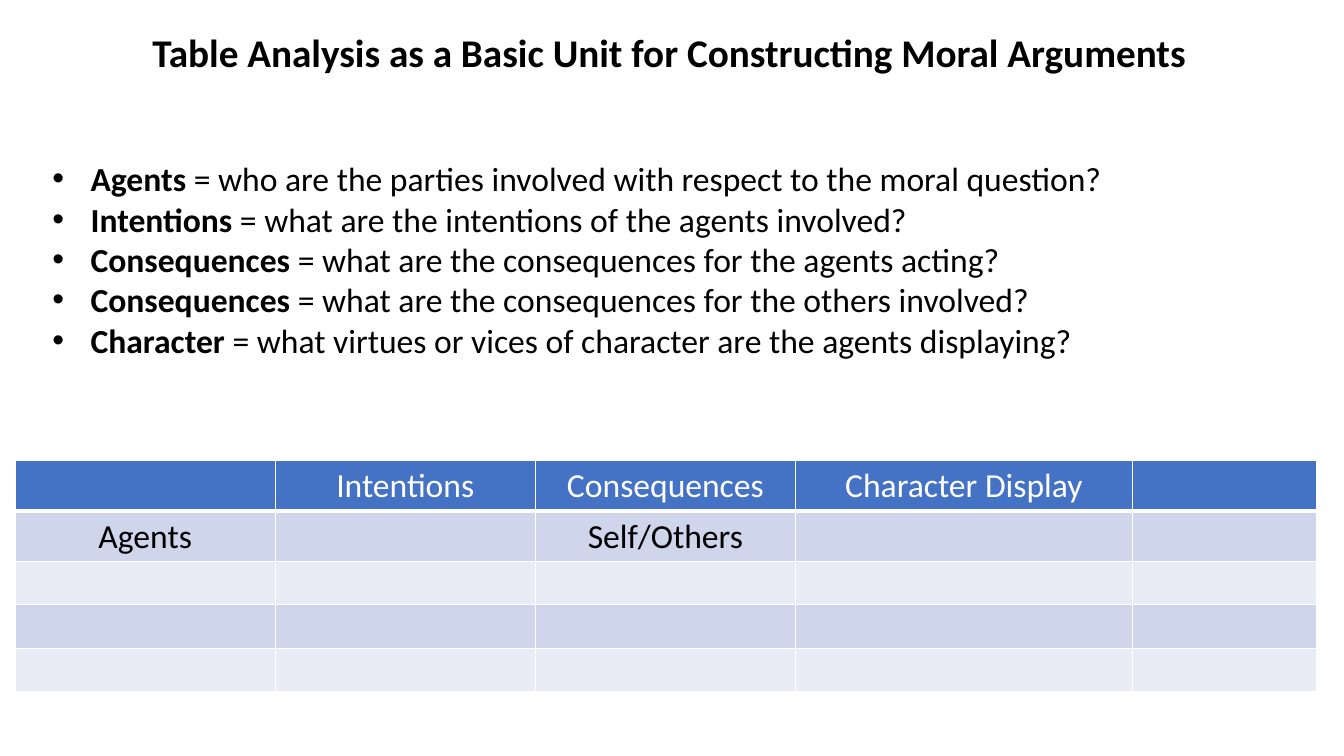
from dataclasses import dataclass

from lxml import etree
from pptx import Presentation
from pptx.dml.color import RGBColor
from pptx.enum.text import MSO_ANCHOR, PP_ALIGN
from pptx.oxml.ns import qn
from pptx.util import Inches, Pt

CENTER = PP_ALIGN.CENTER
LEFT = PP_ALIGN.LEFT
MIDDLE = MSO_ANCHOR.MIDDLE
TOP = MSO_ANCHOR.TOP


@dataclass(frozen=True)
class Theme:
    font: str = "Calibri"
    title_size: int = 28
    body_size: int = 24
    text: str = "000000"
    header_text: str = "FFFFFF"
    header_fill: str = "4472C4"
    bands: tuple = ("CFD5EA", "E9EBF5")
    border: str = "FFFFFF"
    border_width: int = 1
    header_rule_width: int = 3
    bullet_indent: float = 0.38


TITLE = "Table Analysis as a Basic Unit for Constructing Moral Arguments"

DEFINITIONS = [
    ("Agents", "who are the parties involved with respect to the moral question?"),
    ("Intentions", "what are the intentions of the agents involved?"),
    ("Consequences", "what are the consequences for the agents acting?"),
    ("Consequences", "what are the consequences for the others involved?"),
    ("Character", "what virtues or vices of character are the agents displaying?"),
]

COLUMN_WIDTHS = [2.58, 2.58, 2.58, 3.34, 1.83]
ROW_HEIGHTS = [0.5, 0.5, 0.43, 0.43, 0.43]
ANALYSIS_CELLS = {
    (0, 1): "Intentions",
    (0, 2): "Consequences",
    (0, 3): "Character Display",
    (1, 0): "Agents",
    (1, 2): "Self/Others",
}


def add_text(paragraph, text, *, font, size, color, bold=False):
    run = paragraph.add_run()
    run.text = text
    run.font.name = font
    run.font.size = Pt(size)
    run.font.bold = bold
    run.font.color.rgb = RGBColor.from_string(color)


def set_bullet(paragraph, indent):
    """Give the paragraph a round bullet with a hanging indent in inches."""
    properties = paragraph._p.get_or_add_pPr()
    properties.set("marL", str(Inches(indent)))
    properties.set("indent", str(-Inches(indent)))
    etree.SubElement(properties, qn("a:buFont")).set("typeface", "Arial")
    etree.SubElement(properties, qn("a:buChar")).set("char", "•")


def set_borders(cell, color, width, bottom_width):
    """Draw all four cell borders; call before the fill, which must follow them."""
    properties = cell._tc.get_or_add_tcPr()
    widths = {"lnL": width, "lnR": width, "lnT": width, "lnB": bottom_width}
    for side, points in widths.items():
        line = etree.SubElement(properties, qn(f"a:{side}"), w=str(Pt(points)))
        fill = etree.SubElement(line, qn("a:solidFill"))
        etree.SubElement(fill, qn("a:srgbClr")).set("val", color)


class SlideBuilder:
    def __init__(self, slide, theme):
        self.slide = slide
        self.theme = theme

    def text_frame(self, left, top, width, height, anchor=TOP):
        shape = self.slide.shapes.add_textbox(
            Inches(left), Inches(top), Inches(width), Inches(height))
        shape.text_frame.word_wrap = True
        shape.text_frame.vertical_anchor = anchor
        return shape.text_frame

    def styled_text(self, paragraph, text, alignment=LEFT, **changes):
        """Add text in the theme's body style, with any changes given."""
        paragraph.alignment = alignment
        style = {"font": self.theme.font, "size": self.theme.body_size,
                 "color": self.theme.text}
        add_text(paragraph, text, **{**style, **changes})

    def title(self, text, left, top, width, height):
        paragraph = self.text_frame(left, top, width, height, MIDDLE).paragraphs[0]
        paragraph.line_spacing = 0.9
        self.styled_text(paragraph, text, CENTER, size=self.theme.title_size, bold=True)

    def definitions(self, entries, left, top, width, height):
        frame = self.text_frame(left, top, width, height)
        for index, (term, question) in enumerate(entries):
            paragraph = frame.add_paragraph() if index else frame.paragraphs[0]
            self.styled_text(paragraph, term, bold=True)
            self.styled_text(paragraph, f" = {question}")
            set_bullet(paragraph, self.theme.bullet_indent)

    def table(self, texts, column_widths, row_heights, left, top):
        theme = self.theme
        table = self.slide.shapes.add_table(
            len(row_heights), len(column_widths), Inches(left), Inches(top),
            Inches(sum(column_widths)), Inches(sum(row_heights))).table
        for column, width in zip(table.columns, column_widths):
            column.width = Inches(width)
        for row_index, height in enumerate(row_heights):
            table.rows[row_index].height = Inches(height)
            is_header = row_index == 0
            fill = theme.header_fill if is_header else theme.bands[(row_index - 1) % 2]
            color = theme.header_text if is_header else theme.text
            bottom_width = theme.header_rule_width if is_header else theme.border_width
            for column_index, cell in enumerate(table.rows[row_index].cells):
                set_borders(cell, theme.border, theme.border_width, bottom_width)
                cell.fill.solid()
                cell.fill.fore_color.rgb = RGBColor.from_string(fill)
                text = texts.get((row_index, column_index))
                if text:
                    self.styled_text(
                        cell.text_frame.paragraphs[0], text, CENTER, color=color)


def main():
    presentation = Presentation()
    presentation.slide_width = Inches(13.33)
    presentation.slide_height = Inches(7.5)
    slide = presentation.slides.add_slide(presentation.slide_layouts[6])
    builder = SlideBuilder(slide, Theme())
    builder.title(TITLE, 1.17, 0.11, 10.93, 0.86)
    builder.table(ANALYSIS_CELLS, COLUMN_WIDTHS, ROW_HEIGHTS, 0.15, 4.57)
    builder.definitions(DEFINITIONS, 0.42, 1.52, 12.65, 2.12)
    presentation.save("out.pptx")


if __name__ == "__main__":
    main()
